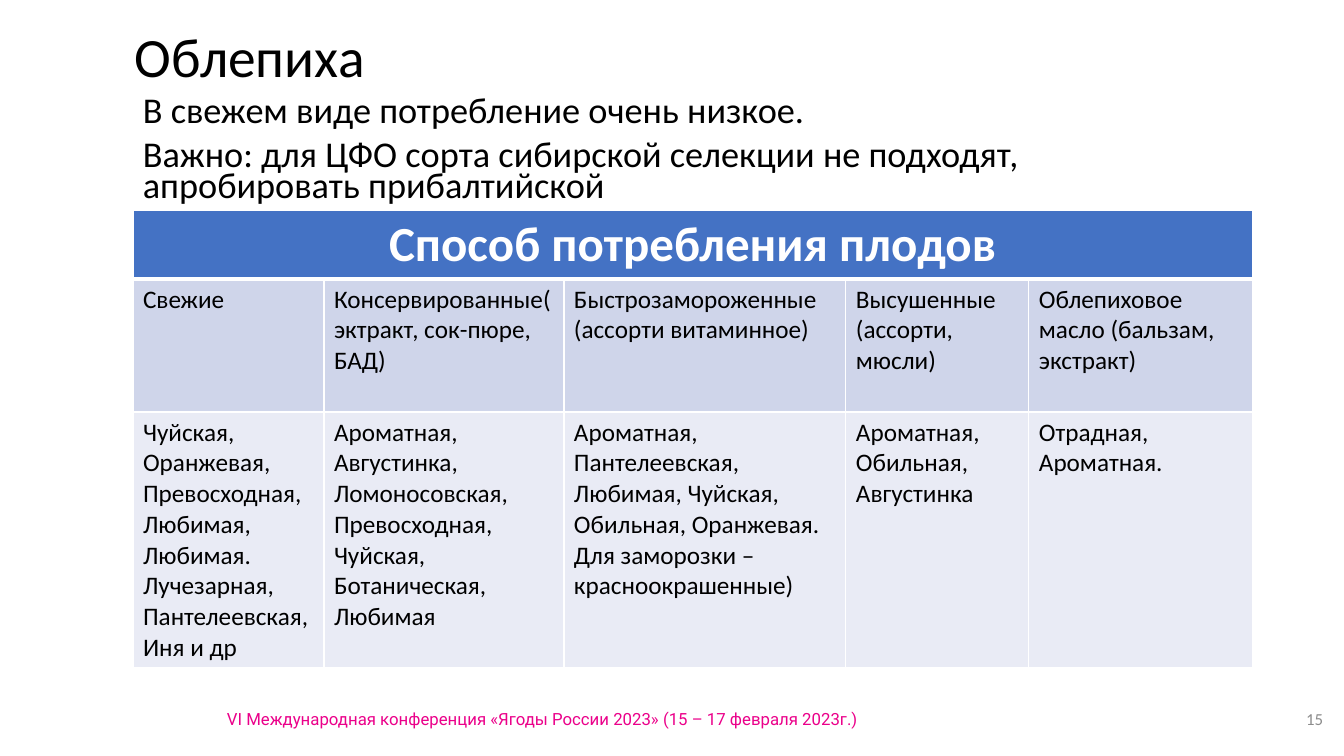
import pptx
import pptx.dml.color
import pptx.enum.text
import pptx.oxml
import pptx.oxml.ns
import pptx.util
from dataclasses import dataclass

SCALE = 914400 / 100.8
ALIGN = pptx.enum.text.PP_ALIGN
ANCHOR = pptx.enum.text.MSO_ANCHOR


@dataclass(frozen=True)
class Theme:
    font: str = "Calibri"
    footer_font: str = "Roboto"
    text: str = "000000"
    white: str = "FFFFFF"
    footer: str = "EB008A"
    number: str = "8C8C8C"
    header_fill: str = "4472C4"
    row_fills: tuple = ("CFD5EA", "E9EBF5")
    title_size: float = 39.6
    body_size: float = 25.9
    header_size: int = 35
    cell_size: int = 18
    small_size: int = 12


THEME = Theme()

COLUMNS = [
    (191, "Свежие",
     "Чуйская, Оранжевая, Превосходная, Любимая, Любимая. "
     "Лучезарная, Пантелеевская, Иня и др"),
    (240, "Консервированные(эктракт, сок-пюре, БАД)",
     "Ароматная, Августинка, Ломоносовская, Превосходная, "
     "Чуйская, Ботаническая, Любимая"),
    (282, "Быстрозамороженные (ассорти витаминное)",
     "Ароматная, Пантелеевская, Любимая, Чуйская, Обильная, Оранжевая. "
     "Для заморозки – красноокрашенные)"),
    (183, "Высушенные (ассорти, мюсли)",
     "Ароматная, Обильная, Августинка"),
    (224, "Облепиховое масло (бальзам, экстракт)",
     "Отрадная, Ароматная."),
]
ROW_HEIGHTS = [69, 133, 256]


def px(length):
    return pptx.util.Emu(round(length * SCALE))


def rgb(color):
    return pptx.dml.color.RGBColor.from_string(color)


def add_run(para, text, size, color, font=THEME.font, bold=False):
    span = para.add_run()
    span.text = text
    span.font.size = pptx.util.Pt(size)
    span.font.name = font
    span.font.bold = bold
    span.font.color.rgb = rgb(color)


def add_text(page, place, lines, size, color, font=THEME.font,
             align=ALIGN.LEFT, anchor=ANCHOR.TOP, spacing=1.0, gap=0):
    box = page.shapes.add_textbox(*map(px, place))
    frame = box.text_frame
    frame.word_wrap = True
    frame.vertical_anchor = anchor
    for index, line in enumerate(lines):
        para = frame.add_paragraph() if index else frame.paragraphs[0]
        para.alignment = align
        para.line_spacing = spacing
        if index:
            para.space_before = pptx.util.Pt(gap)
        add_run(para, line, size, color, font)


def set_borders(cell, bottom):
    properties = cell._tc.get_or_add_tcPr()
    widths = {"lnL": 1, "lnR": 1, "lnT": 1, "lnB": bottom}
    for position, (side, width) in enumerate(widths.items()):
        border = pptx.oxml.parse_xml(
            f'<a:{side} {pptx.oxml.ns.nsdecls("a")} w="{pptx.util.Pt(width)}">'
            f'<a:solidFill><a:srgbClr val="{THEME.white}"/></a:solidFill>'
            f'</a:{side}>')
        properties.insert(position, border)


def style_cell(cell, fill, bottom=1):
    cell.fill.solid()
    cell.fill.fore_color.rgb = rgb(fill)
    set_borders(cell, bottom)


def add_usage_table(page, left, top):
    widths, methods, varieties = zip(*COLUMNS)
    table = page.shapes.add_table(
        len(ROW_HEIGHTS), len(widths), px(left), px(top),
        px(sum(widths)), px(sum(ROW_HEIGHTS))).table
    for column, width in zip(table.columns, widths):
        column.width = px(width)
    for row, height in zip(table.rows, ROW_HEIGHTS):
        row.height = px(height)

    header = table.cell(0, 0)
    header.merge(table.cell(0, len(widths) - 1))
    for cell in table.rows[0].cells:
        style_cell(cell, THEME.header_fill, bottom=3)
    para = header.text_frame.paragraphs[0]
    para.alignment = ALIGN.CENTER
    add_run(para, "Способ потребления плодов", THEME.header_size,
            THEME.white, bold=True)

    for row_index, texts in enumerate((methods, varieties), start=1):
        for column_index, text in enumerate(texts):
            cell = table.cell(row_index, column_index)
            style_cell(cell, THEME.row_fills[row_index - 1])
            add_run(cell.text_frame.paragraphs[0], text,
                    THEME.cell_size, THEME.text)


def main():
    deck = pptx.Presentation()
    deck.slide_width, deck.slide_height = px(1344), px(756)
    page = deck.slides.add_slide(deck.slide_layouts[6])

    add_text(page, (217, 704, 672, 30),
             ["VI Международная конференция «Ягоды России 2023» "
              "(15 – 17 февраля 2023г.)"],
             THEME.small_size, THEME.footer, THEME.footer_font)
    add_text(page, (125, 25, 1059, 69), ["Облепиха"],
             THEME.title_size, THEME.text, anchor=ANCHOR.MIDDLE, spacing=0.9)
    add_text(page, (133, 94, 1078, 116),
             ["В свежем виде потребление очень низкое.",
              "Важно: для ЦФО сорта сибирской селекции не подходят, "
              "апробировать прибалтийской"],
             THEME.body_size, THEME.text, spacing=0.7, gap=10)
    add_text(page, (1252, 699, 81, 40), ["15"], THEME.small_size,
             THEME.number, align=ALIGN.RIGHT, anchor=ANCHOR.MIDDLE)
    add_usage_table(page, 133, 210)
    deck.save("out.pptx")


if __name__ == "__main__":
    main()
